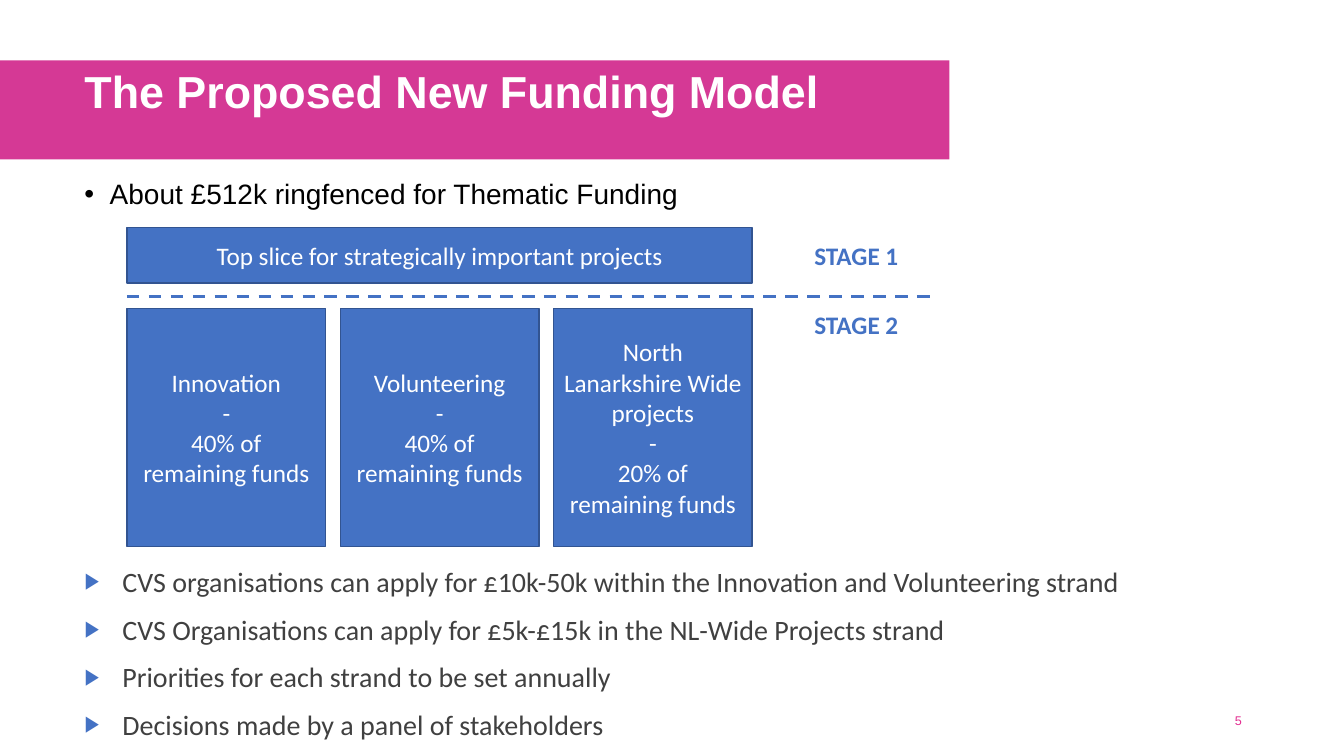
from dataclasses import dataclass

from lxml import etree
from pptx import Presentation
from pptx.dml.color import RGBColor
from pptx.enum import dml, shapes, text
from pptx.oxml import ns
from pptx.util import Pt


@dataclass(frozen=True)
class Theme:
    pink: str = "D53995"
    number_pink: str = "E32D91"
    blue: str = "4472C4"
    outline: str = "325491"
    white: str = "FFFFFF"
    black: str = "000000"
    grey: str = "404040"
    heading_font: str = "Arial"
    body_font: str = "Calibri"
    title_size: int = 32
    bullet_size: int = 20
    diagram_size: int = 18
    number_size: int = 9


THEME = Theme()

STRANDS = [
    ("Innovation", "40% of remaining funds"),
    ("Volunteering", "40% of remaining funds"),
    ("North Lanarkshire Wide projects", "20% of remaining funds"),
]
RULES = [
    "CVS organisations can apply for £10k-50k within the Innovation and Volunteering strand",
    "CVS Organisations can apply for £5k-£15k in the NL-Wide Projects strand",
    "Priorities for each strand to be set annually",
    "Decisions made by a panel of stakeholders",
]


def rgb(color):
    return RGBColor.from_string(color)


def write(shape, lines, size, color, font=THEME.body_font, bold=False,
          align=text.PP_ALIGN.LEFT, anchor=text.MSO_ANCHOR.TOP):
    """Fill a shape with equally formatted paragraphs."""
    frame = shape.text_frame
    frame.word_wrap = True
    frame.vertical_anchor = anchor
    frame.text = "\n".join(lines)
    for paragraph in frame.paragraphs:
        paragraph.alignment = align
        for run in paragraph.runs:
            run.font.name = font
            run.font.size = Pt(size)
            run.font.bold = bold
            run.font.color.rgb = rgb(color)


def add_text(slide, left, top, width, height, lines, size, color, **style):
    shape = slide.shapes.add_textbox(Pt(left), Pt(top), Pt(width), Pt(height))
    write(shape, lines, size, color, **style)
    return shape


def add_box(slide, left, top, width, height, fill, outline=None):
    shape = slide.shapes.add_shape(shapes.MSO_SHAPE.RECTANGLE,
                                   Pt(left), Pt(top), Pt(width), Pt(height))
    shape.shadow.inherit = False
    shape.fill.solid()
    shape.fill.fore_color.rgb = rgb(fill)
    if outline:
        shape.line.color.rgb = rgb(outline)
        shape.line.width = Pt(1)
    else:
        shape.line.fill.background()
    return shape


def add_diagram_box(slide, left, top, width, height, lines):
    shape = add_box(slide, left, top, width, height, THEME.blue, THEME.outline)
    write(shape, lines, THEME.diagram_size, THEME.white,
          align=text.PP_ALIGN.CENTER, anchor=text.MSO_ANCHOR.MIDDLE)


def add_dashed_line(slide, left, right, y):
    line = slide.shapes.add_connector(shapes.MSO_CONNECTOR.STRAIGHT,
                                      Pt(left), Pt(y), Pt(right), Pt(y))
    line.line.color.rgb = rgb(THEME.blue)
    line.line.width = Pt(2.25)
    line.line.dash_style = dml.MSO_LINE.DASH
    etree.SubElement(line._element.spPr, ns.qn("a:effectLst"))


def add_bullets(shape, character, indent, color, percent):
    for index, paragraph in enumerate(shape.text_frame.paragraphs):
        properties = paragraph._p.get_or_add_pPr()
        properties.set("marL", str(Pt(indent)))
        properties.set("indent", str(-Pt(indent)))
        bullet_color = etree.SubElement(properties, ns.qn("a:buClr"))
        etree.SubElement(bullet_color, ns.qn("a:srgbClr"), val=color)
        etree.SubElement(properties, ns.qn("a:buSzPct"), val=str(percent * 1000))
        etree.SubElement(properties, ns.qn("a:buFont"), typeface=THEME.heading_font)
        etree.SubElement(properties, ns.qn("a:buChar"), char=character)
        if index:
            paragraph.space_before = Pt(10)


def add_funding_diagram(slide):
    left, width, gap = 90.7, 446.6, 10.4
    strand_width = (width - gap * (len(STRANDS) - 1)) / len(STRANDS)

    # Stage 1 above the divider, stage 2 below
    add_diagram_box(slide, left, 162.7, width, 39.6,
                    ["Top slice for strategically important projects"])
    for index, (name, share) in enumerate(STRANDS):
        add_diagram_box(slide, left + index * (strand_width + gap), 220.3,
                        strand_width, 170, [name, "-", share])
    add_dashed_line(slide, left, 669.6, 211.7)
    for label, top in (("STAGE 1", 167.8), ("STAGE 2", 217.4)):
        add_text(slide, 574.6, top, 167, 29, [label],
                 THEME.diagram_size, THEME.blue, bold=True)


def main():
    presentation = Presentation()
    presentation.slide_width, presentation.slide_height = Pt(960), Pt(540)
    slide = presentation.slides.add_slide(presentation.slide_layouts[6])
    left = 53.3

    # Title banner
    add_box(slide, -1.4, 43.2, 679.6, 70.6, THEME.pink)
    title = add_text(slide, left, 46, 676.8, 103.7, ["The Proposed New Funding Model"],
                     THEME.title_size, THEME.white, font=THEME.heading_font, bold=True)
    title.text_frame.paragraphs[0].line_spacing = 0.9

    # Opening point
    opening = add_text(slide, left, 125.3, 676.8, 37.4,
                       ["About £512k ringfenced for Thematic Funding"],
                       THEME.bullet_size, THEME.black, font=THEME.heading_font)
    add_bullets(opening, "•", 18, THEME.black, 100)
    opening.text_frame.paragraphs[0].line_spacing = 0.9

    add_funding_diagram(slide)

    # Rules for applicants
    rules = add_text(slide, left, 399.6, 855.4, 140.4, RULES,
                     THEME.bullet_size, THEME.grey)
    add_bullets(rules, "▶", 27, THEME.blue, 80)

    # Slide number
    add_text(slide, 678.2, 500.4, 216, 28.8, ["5"], THEME.number_size,
             THEME.number_pink, font=THEME.heading_font,
             align=text.PP_ALIGN.RIGHT, anchor=text.MSO_ANCHOR.MIDDLE)

    presentation.save("out.pptx")


if __name__ == "__main__":
    main()
